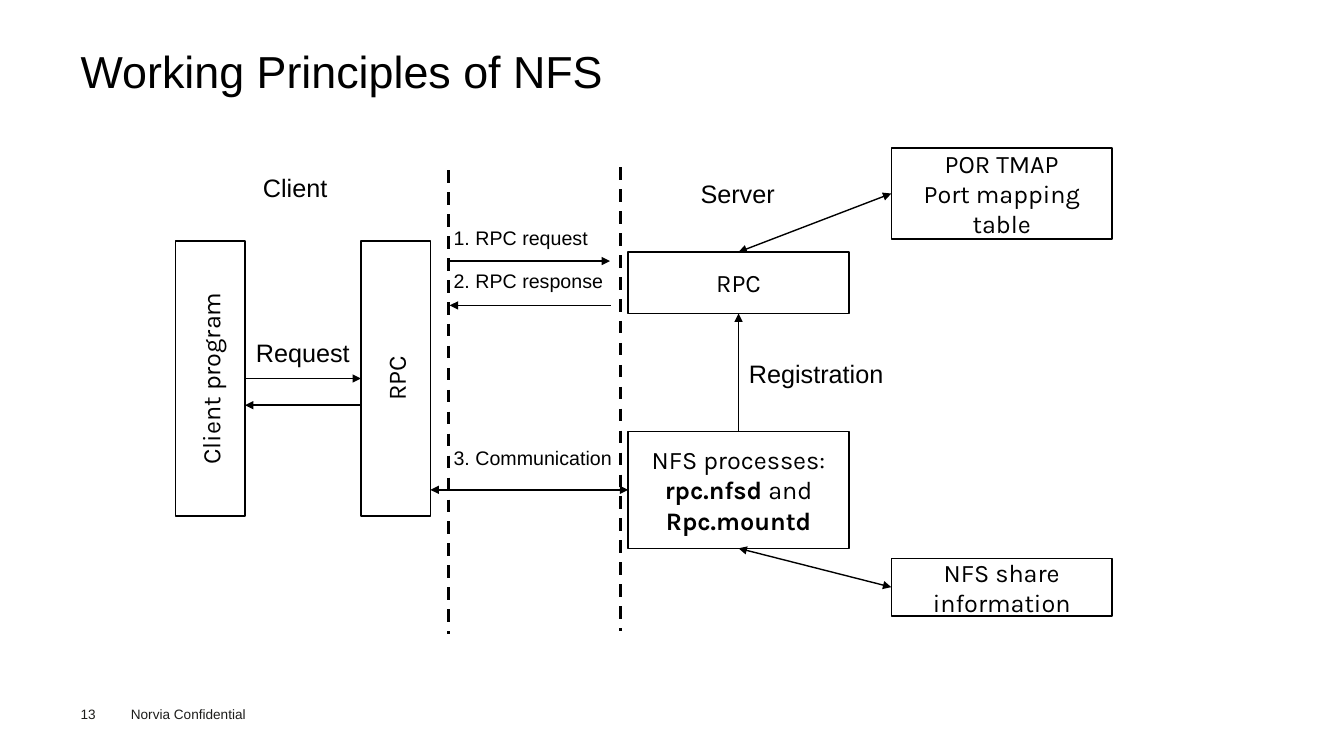
"""Build the slide that explains the working principles of NFS."""
import dataclasses

import lxml.etree
import pptx
import pptx.dml.color
import pptx.enum.dml
import pptx.enum.shapes
import pptx.enum.text
import pptx.oxml.ns
import pptx.util

TOP, LEFT, BOTTOM, RIGHT = range(4)


@dataclasses.dataclass(frozen=True)
class Theme:
    ink: str = "000000"
    footer_ink: str = "1D1D1B"
    label_font: str = "Arial"
    box_font: str = "Karla"
    title_size: float = 32
    body_size: float = 18
    step_size: float = 14
    footer_size: float = 9.7
    thin: float = 1
    thick: float = 2.25


class Page:
    def __init__(self, slide, theme, scale):
        self.shapes = slide.shapes
        self.theme = theme
        self.scale = scale

    def emu(self, *lengths):
        return [pptx.util.Emu(length * self.scale) for length in lengths]

    def ink(self, color=None):
        return pptx.dml.color.RGBColor.from_string(color or self.theme.ink)

    def span(self, para, words, size, font, bold=False, color=None):
        span = para.add_run()
        span.text = words
        span.font.name = font
        span.font.size = pptx.util.Pt(size)
        span.font.bold = bold
        span.font.color.rgb = self.ink(color)

    def text(self, place, words, size, color=None, wrap=False, inset=True, spacing=None):
        box = self.shapes.add_textbox(*self.emu(*place))
        frame = box.text_frame
        frame.word_wrap = wrap
        if not inset:
            frame.margin_left = frame.margin_top = 0
            frame.margin_right = frame.margin_bottom = 0
        para = frame.paragraphs[0]
        para.line_spacing = spacing
        self.span(para, words, size, self.theme.label_font, color=color)

    def box(self, place, *lines, upright=False):
        box = self.shapes.add_shape(
            pptx.enum.shapes.MSO_SHAPE.RECTANGLE, *self.emu(*place))
        box.shadow.inherit = False
        box.fill.background()
        box.line.color.rgb = self.ink()
        box.line.width = pptx.util.Pt(self.theme.thin)
        frame = box.text_frame
        frame.word_wrap = True
        frame.vertical_anchor = pptx.enum.text.MSO_ANCHOR.MIDDLE
        if upright:
            body = box._element.txBody.find(pptx.oxml.ns.qn("a:bodyPr"))
            body.set("vert", "vert270")
        for index, line in enumerate(lines):
            para = frame.add_paragraph() if index else frame.paragraphs[0]
            para.alignment = pptx.enum.text.PP_ALIGN.CENTER
            for words, bold in line:
                self.span(para, words, self.theme.body_size, self.theme.box_font, bold)
        return box

    def line(self, start, end, joins=(None, None), arrows=("tailEnd",), dashed=False):
        line = self.shapes.add_connector(
            pptx.enum.shapes.MSO_CONNECTOR.STRAIGHT, *self.emu(*start, *end))
        line.line.color.rgb = self.ink()
        line.line.width = pptx.util.Pt(self.theme.thick if dashed else self.theme.thin)
        if dashed:
            line.line.dash_style = pptx.enum.dml.MSO_LINE.DASH
        for connect, join in zip((line.begin_connect, line.end_connect), joins):
            if join:
                connect(*join)
        properties = line._element.spPr
        outline = properties.find(pptx.oxml.ns.qn("a:ln"))
        for arrow in arrows:
            lxml.etree.SubElement(outline, pptx.oxml.ns.qn("a:" + arrow), type="triangle")
        lxml.etree.SubElement(properties, pptx.oxml.ns.qn("a:effectLst"))


def main():
    deck = pptx.Presentation()
    scale = 9144
    deck.slide_width, deck.slide_height = 1333 * scale, 750 * scale
    theme = Theme()
    page = Page(deck.slides.add_slide(deck.slide_layouts[6]), theme, scale)

    page.text((120, 695, 160, 27), "Norvia Confidential", theme.footer_size,
              theme.footer_ink, wrap=True)
    page.text((80, 700, 55, 16), "13", theme.footer_size, theme.footer_ink,
              wrap=True, inset=False)
    page.text((80, 49, 1173, 54), "Working Principles of NFS", theme.title_size,
              wrap=True, inset=False, spacing=0.9)

    program = page.box((174, 239, 69, 273), [("Client program", False)], upright=True)
    client_rpc = page.box((358, 239, 69, 273), [("RPC", False)], upright=True)
    server_rpc = page.box((623, 250, 219, 61), [("RPC", False)])
    processes = page.box(
        (623, 428, 219, 116),
        [("NFS processes:", False)],
        [("rpc.nfsd", True), (" and ", False), ("Rpc.mountd", True)])
    port_map = page.box(
        (884, 147, 219, 90), [("POR TMAP", False)], [("Port mapping table", False)])
    share = page.box((884, 554, 219, 57), [("NFS share information", False)])

    both = ("headEnd", "tailEnd")
    page.line((884, 192), (732, 250), ((port_map, LEFT), (server_rpc, TOP)), both)
    page.line((732, 544), (884, 583), ((processes, BOTTOM), (share, LEFT)), both)
    page.line((732, 428), (732, 311), ((processes, TOP), (server_rpc, BOTTOM)))
    page.line((623, 486), (427, 486), ((processes, LEFT), None), both)
    for x, top in ((445, 169), (615, 166)):
        page.line((x, top), (x, top + 460), arrows=(), dashed=True)

    for top, words in (
            (219, "1. RPC request"),
            (262, "2. RPC response"),
            (437, "3. Communication")):
        page.text((440, top, 182, 40), words, theme.step_size)
    for left, top, width, words in (
            (251, 166, 96, "Client"),
            (685, 172, 100, "Server"),
            (733, 351, 160, "Registration"),
            (244, 330, 120, "Request")):
        page.text((left, top, width, 40), words, theme.body_size)

    page.line((445, 259), (605, 259))
    page.line((606, 303), (446, 303))
    page.line((243, 376), (358, 376), ((program, RIGHT), (client_rpc, LEFT)))
    page.line((358, 402), (243, 402))

    deck.save("out.pptx")


if __name__ == "__main__":
    main()
